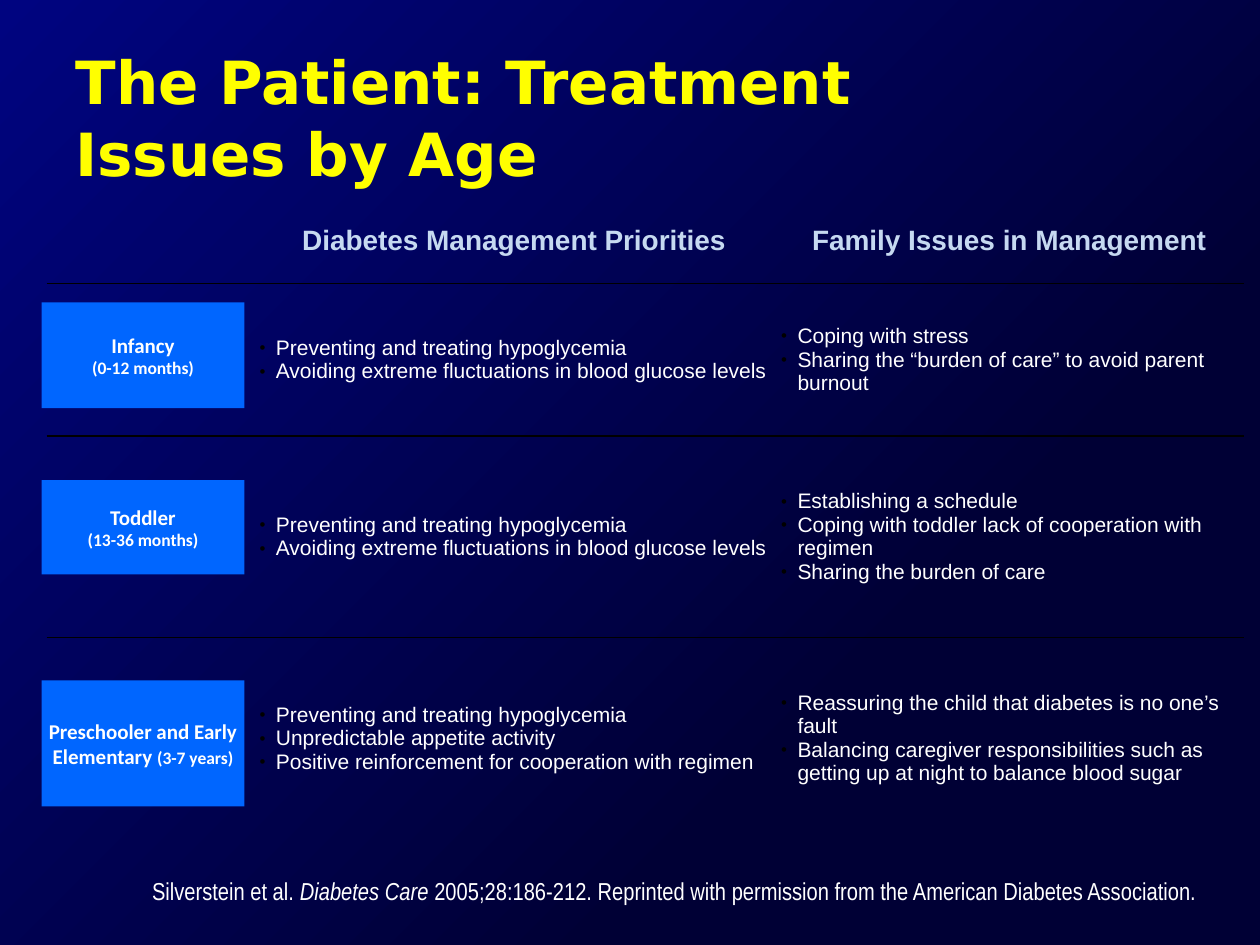
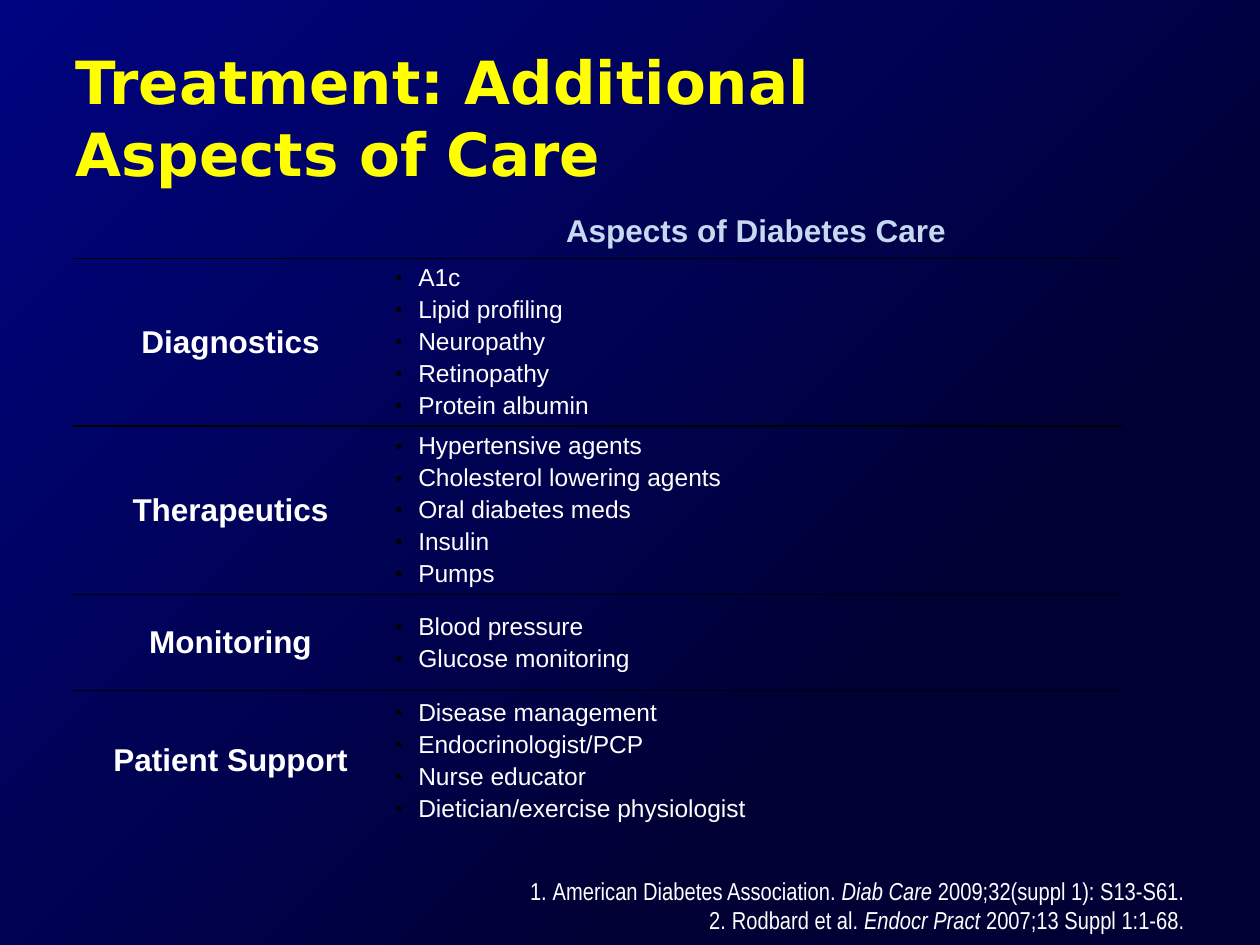
import pptx
import pptx.dml.color
import pptx.enum.shapes
import pptx.enum.text
import pptx.oxml
import pptx.oxml.ns
import pptx.util

Inches = pptx.util.Inches
Pt = pptx.util.Pt
RGBColor = pptx.dml.color.RGBColor
PP_ALIGN = pptx.enum.text.PP_ALIGN
MSO_ANCHOR = pptx.enum.text.MSO_ANCHOR
qn = pptx.oxml.ns.qn
NS = pptx.oxml.ns.nsdecls("a")

NIGHT = RGBColor(0x00, 0x00, 0x35)
NAVY = RGBColor(0x00, 0x04, 0x80)
YELLOW = RGBColor(0xFF, 0xFF, 0x00)
PALE = RGBColor(0xC6, 0xD9, 0xF1)
WHITE = RGBColor(0xFF, 0xFF, 0xFF)
BLACK = RGBColor(0x00, 0x00, 0x00)
BLUE = RGBColor(0x00, 0x66, 0xFF)

NO_TABLE_STYLE = "{2D5ABB26-0587-4C30-8999-92F81FD0307C}"

AGES = {
    "title": "The Patient: Treatment Issues by Age",
    "at": (0.37, 1.58),
    "cols": (1.64, 4.14, 3.72),
    "rows": (0.67, 1.21, 1.6, 1.6),
    "head_size": 16, "item_size": 12, "indent": 0.13, "gap": 0,
    "head": ("", "Diabetes Management Priorities", "Family Issues in Management"),
    "body": [
        ("",
         ["Preventing and treating hypoglycemia",
          "Avoiding extreme fluctuations in blood glucose levels"],
         ["Coping with stress",
          "Sharing the “burden of care” to avoid parent burnout"]),
        ("",
         ["Preventing and treating hypoglycemia",
          "Avoiding extreme fluctuations in blood glucose levels"],
         ["Establishing a schedule",
          "Coping with toddler lack of cooperation with regimen",
          "Sharing the burden of care"]),
        ("",
         ["Preventing and treating hypoglycemia",
          "Unpredictable appetite activity",
          "Positive reinforcement for cooperation with regimen"],
         ["Reassuring the child that diabetes is no one’s fault",
          "Balancing caregiver responsibilities such as getting up at night "
          "to balance blood sugar"]),
    ],
    "source_width": 8.83,
    "sources": [
        ("Silverstein et al. ", "Diabetes Care ",
         "2005;28:186-212. Reprinted with permission from the American Diabetes Association."),
    ],
}

AGE_LABELS = [
    (2.4, 0.84, [[("Infancy", 12)], [("(0-12 months)", 10)]]),
    (3.81, 0.75, [[("Toddler", 12)], [("(13-36 months)", 10)]]),
    (5.4, 1.0, [[("Preschooler and Early Elementary ", 12), ("(3-7 years)", 10)]]),
]

ASPECTS = {
    "title": "Treatment: Additional Aspects of Care",
    "at": (0.57, 1.62),
    "cols": (2.52, 5.82),
    "rows": (0.43, 1.33, 1.34, 0.76, 1.12),
    "head_size": 18, "item_size": 14, "indent": 0.18, "gap": 2.5,
    "head": ("", "Aspects of Diabetes Care"),
    "body": [
        ("Diagnostics",
         ["A1c", "Lipid profiling", "Neuropathy", "Retinopathy", "Protein albumin"]),
        ("Therapeutics",
         ["Hypertensive agents", "Cholesterol lowering agents", "Oral diabetes meds",
          "Insulin", "Pumps"]),
        ("Monitoring", ["Blood pressure", "Glucose monitoring"]),
        ("Patient Support",
         ["Disease management", "Endocrinologist/PCP", "Nurse educator",
          "Dietician/exercise physiologist"]),
    ],
    "source_width": 8.73,
    "sources": [
        ("American Diabetes Association. ", "Diab Care ", "2009;32(suppl 1): S13-S61."),
        ("Rodbard et al. ", "Endocr Pract ", "2007;13 Suppl 1:1-68."),
    ],
}


def add_run(p, text, size, font, color, bold=False, italic=False):
    r = p.add_run()
    r.text = text
    r.font.size = Pt(size)
    r.font.name = font
    r.font.color.rgb = color
    r.font.bold = bold
    r.font.italic = italic


def next_paragraph(tf, i):
    return tf.add_paragraph() if i else tf.paragraphs[0]


def add_marker(p, indent, *marks):
    pPr = p._p.get_or_add_pPr()
    pPr.set("marL", str(Inches(indent)))
    pPr.set("indent", str(-Inches(indent)))
    for mark in marks:
        pPr.append(pptx.oxml.parse_xml(mark))


def set_margins(box, x, y):
    box.margin_left = box.margin_right = Inches(x)
    box.margin_top = box.margin_bottom = Inches(y)


def paint_background(master):
    master.background.fill.gradient()
    grad = master.element.find(".//" + qn("a:gradFill"))
    grad.getparent().replace(grad, pptx.oxml.parse_xml(
        f'<a:gradFill {NS} rotWithShape="1"><a:gsLst>'
        f'<a:gs pos="30000"><a:srgbClr val="{NIGHT}"/></a:gs>'
        f'<a:gs pos="100000"><a:srgbClr val="{NAVY}"/></a:gs></a:gsLst>'
        '<a:path path="circle"><a:fillToRect l="100000" t="100000"/></a:path>'
        '</a:gradFill>'))


def add_title(s, text):
    sp = s.shapes.title
    sp.left, sp.top, sp.width, sp.height = map(Inches, (0.5, 0.3, 8.11, 1.25))
    tf = sp.text_frame
    tf.auto_size = pptx.enum.text.MSO_AUTO_SIZE.NONE
    tf.vertical_anchor = MSO_ANCHOR.MIDDLE
    p = tf.paragraphs[0]
    p.alignment = PP_ALIGN.LEFT
    add_run(p, text, 34, "DejaVu Sans", YELLOW, bold=True)


def rule_below(cell):
    cell._tc.get_or_add_tcPr().insert(0, pptx.oxml.parse_xml(
        f'<a:lnB {NS} w="{Pt(1)}"><a:solidFill><a:srgbClr val="{BLACK}"/>'
        '</a:solidFill></a:lnB>'))


def fill_cell(cell, content, color, spec_of):
    tf = cell.text_frame
    if isinstance(content, str):
        p = tf.paragraphs[0]
        p.alignment = PP_ALIGN.CENTER
        if content:
            add_run(p, content, spec_of["head_size"], "Arial", color, bold=True)
        return
    for i, item in enumerate(content):
        p = next_paragraph(tf, i)
        if i and spec_of["gap"]:
            p.space_before = Pt(spec_of["gap"])
        add_marker(p, spec_of["indent"],
                   f'<a:buClr {NS}><a:srgbClr val="{BLACK}"/></a:buClr>',
                   f'<a:buSzPct {NS} val="80000"/>',
                   f'<a:buFont {NS} typeface="Arial"/>',
                   f'<a:buChar {NS} char="•"/>')
        add_run(p, item, spec_of["item_size"], "Arial", color)


def add_care_table(s, data):
    rows, cols = data["rows"], data["cols"]
    frame = s.shapes.add_table(len(rows), len(cols), *map(
        Inches, (*data["at"], sum(cols), sum(rows))))
    table = frame.table
    table.first_row = table.horz_banding = False
    table._tbl.tblPr.find(qn("a:tableStyleId")).text = NO_TABLE_STYLE
    for column, width in zip(table.columns, cols):
        column.width = Inches(width)
    for row, height in zip(table.rows, rows):
        row.height = Inches(height)
    for i, contents in enumerate([data["head"], *data["body"]]):
        for j, content in enumerate(contents):
            cell = table.cell(i, j)
            cell.fill.background()
            cell.vertical_anchor = MSO_ANCHOR.MIDDLE
            set_margins(cell, 0.05, 0.01)
            fill_cell(cell, content, WHITE if i else PALE, data)
            if i < len(rows) - 1:
                rule_below(cell)


def add_sources(s, sources, width):
    tf = s.shapes.add_textbox(*map(
        Inches, (0.67, 6.95, width, 0.24 * len(sources)))).text_frame
    tf.word_wrap = True
    set_margins(tf, 0, 0)
    for i, (authors, journal, rest) in enumerate(sources):
        p = next_paragraph(tf, i)
        p.alignment = PP_ALIGN.RIGHT
        if len(sources) > 1:
            add_marker(p, 0.18, f'<a:buFont {NS} typeface="Arial Narrow"/>',
                       f'<a:buAutoNum {NS} type="arabicPeriod"/>')
        for text in (authors, journal, rest):
            add_run(p, text, 14, "Arial Narrow", WHITE, italic=text == journal)


def add_age_label(s, top, height, lines):
    sp = s.shapes.add_shape(pptx.enum.shapes.MSO_SHAPE.RECTANGLE,
                            *map(Inches, (0.33, top, 1.61, height)))
    sp.shadow.inherit = False
    sp.fill.solid()
    sp.fill.fore_color.rgb = BLUE
    sp.line.fill.background()
    tf = sp.text_frame
    tf.word_wrap = True
    tf.vertical_anchor = MSO_ANCHOR.MIDDLE
    set_margins(tf, 0.05, 0.05)
    for i, runs in enumerate(lines):
        p = next_paragraph(tf, i)
        p.alignment = PP_ALIGN.CENTER
        for text, size in runs:
            add_run(p, text, size, "Calibri", WHITE, bold=True)


def add_care_slide(prs, data):
    s = prs.slides.add_slide(prs.slide_layouts[5])
    add_title(s, data["title"])
    add_care_table(s, data)
    add_sources(s, data["sources"], data["source_width"])
    return s


def main():
    prs = pptx.Presentation()
    prs.slide_width, prs.slide_height = Inches(10), Inches(7.5)
    paint_background(prs.slide_master)
    s = add_care_slide(prs, AGES)
    for label in AGE_LABELS:
        add_age_label(s, *label)
    add_care_slide(prs, ASPECTS)
    prs.save("out.pptx")


if __name__ == "__main__":
    main()
